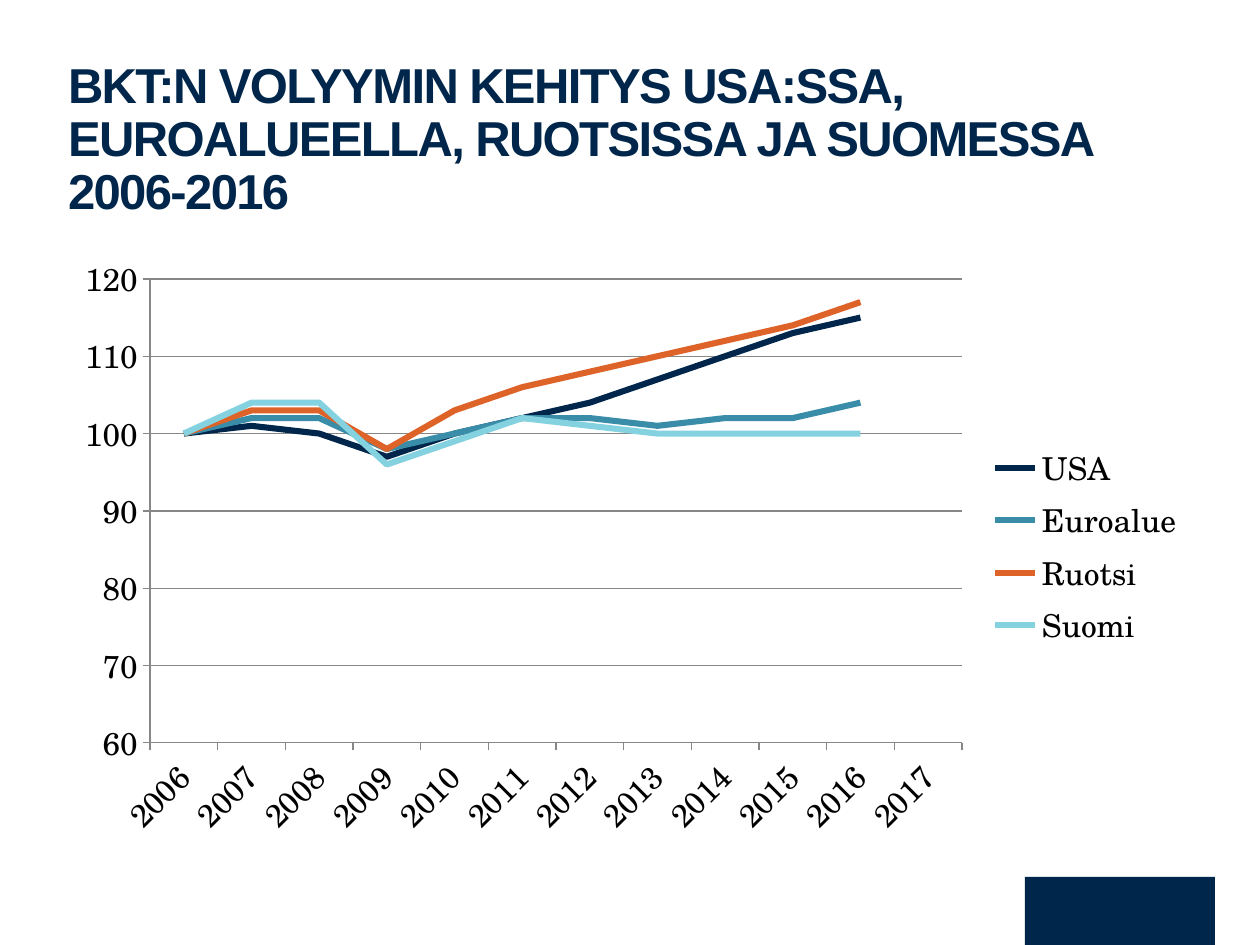
from dataclasses import dataclass

from lxml import etree
from pptx import Presentation
from pptx.chart.data import CategoryChartData
from pptx.dml.color import RGBColor
from pptx.enum.chart import XL_CHART_TYPE, XL_LEGEND_POSITION, XL_TICK_MARK
from pptx.enum.shapes import MSO_SHAPE
from pptx.enum.text import MSO_ANCHOR, PP_ALIGN
from pptx.oxml.ns import qn
from pptx.util import Pt

LINE_CHART = XL_CHART_TYPE.LINE
LEGEND_RIGHT = XL_LEGEND_POSITION.RIGHT
TICK_OUTSIDE = XL_TICK_MARK.OUTSIDE
RECTANGLE = MSO_SHAPE.RECTANGLE
MIDDLE = MSO_ANCHOR.MIDDLE
LEFT = PP_ALIGN.LEFT
TITLE_ONLY = 5


@dataclass
class Theme:
    navy: RGBColor = RGBColor(0x00, 0x27, 0x4B)
    teal: RGBColor = RGBColor(0x3A, 0x8D, 0xA9)
    orange: RGBColor = RGBColor(0xDE, 0x63, 0x28)
    aqua: RGBColor = RGBColor(0x84, 0xD2, 0xDF)
    black: RGBColor = RGBColor(0, 0, 0)
    grid: RGBColor = RGBColor(0x87, 0x87, 0x87)
    title_font: str = "Arial"
    chart_font: str = "TeX Gyre Schola"
    title_size: int = 28
    chart_size: int = 18


def px(length):
    return round(length * 914400 / 126)


theme = Theme()
presentation = Presentation()
presentation.slide_width = px(1260)
presentation.slide_height = px(945)
slide = presentation.slides.add_slide(presentation.slide_layouts[TITLE_ONLY])

# Plain block in the brand corner
brand_block = slide.shapes.add_shape(RECTANGLE, px(1025), px(877), px(190), px(68))
brand_block.shadow.inherit = False
brand_block.fill.solid()
brand_block.fill.fore_color.rgb = theme.navy
brand_block.line.fill.background()

# Title
title = slide.shapes.title
title.left, title.top, title.width, title.height = px(63), px(56), px(1134), px(169)
text_frame = title.text_frame
text_frame.text = "BKT:N VOLYYMIN KEHITYS USA:SSA, EUROALUEELLA, RUOTSISSA JA SUOMESSA 2006-2016"
text_frame.word_wrap = True
text_frame.vertical_anchor = MIDDLE
text_frame.margin_left = text_frame.margin_right = px(5)
text_frame.margin_top = text_frame.margin_bottom = px(5)
paragraph = text_frame.paragraphs[0]
paragraph.alignment = LEFT
paragraph.line_spacing = 0.9
title_run = paragraph.runs[0]
title_run.font.name = theme.title_font
title_run.font.size = Pt(theme.title_size)
title_run.font.bold = True
title_run.font.color.rgb = theme.navy
title_run._r.get_or_add_rPr().set("spc", "-90")

# GDP volume index, 2006 = 100; 2017 has no values yet
gdp_series = [
    ("USA", theme.navy, [100, 101, 100, 97, 100, 102, 104, 107, 110, 113, 115]),
    ("Euroalue", theme.teal, [100, 102, 102, 98, 100, 102, 102, 101, 102, 102, 104]),
    ("Ruotsi", theme.orange, [100, 103, 103, 98, 103, 106, 108, 110, 112, 114, 117]),
    ("Suomi", theme.aqua, [100, 104, 104, 96, 99, 102, 101, 100, 100, 100, 100]),
]
chart_data = CategoryChartData()
chart_data.categories = [str(year) for year in range(2006, 2018)]
for name, color, values in gdp_series:
    chart_data.add_series(name, values + [None])
chart = slide.shapes.add_chart(
    LINE_CHART, px(63), px(244), px(1134), px(605), chart_data
).chart
chart.has_title = False
chart.font.name = theme.chart_font
chart.font.size = Pt(theme.chart_size)
chart.font.color.rgb = theme.black

# Series lines
plot = chart.plots[0]
plot.vary_by_categories = False
for series, (name, color, values) in zip(plot.series, gdp_series):
    series.smooth = False
    series.format.line.color.rgb = color
    series.format.line.width = Pt(3.5)

# Axes and gridlines
value_axis, category_axis = chart.value_axis, chart.category_axis
value_axis.minimum_scale = 60
value_axis.maximum_scale = 120
value_axis.major_unit = 10
value_axis.has_major_gridlines = True
for axis in (value_axis, category_axis):
    axis.major_tick_mark = TICK_OUTSIDE
for part in (value_axis, category_axis, value_axis.major_gridlines):
    part.format.line.color.rgb = theme.grid
    part.format.line.width = Pt(0.7)

# Slanted year labels
category_axis.tick_labels.font.size = Pt(theme.chart_size)
label_body = category_axis._element.find(qn("c:txPr")).find(qn("a:bodyPr"))
label_body.set("rot", "-2700000")
label_body.set("vert", "horz")

# Legend
chart.has_legend = True
chart.legend.position = LEGEND_RIGHT
chart.legend.include_in_layout = False

# Plot area inside the chart frame, as fractions of it
plot_area = chart._chartSpace.chart.plotArea
for layout in plot_area.findall(qn("c:layout")):
    plot_area.remove(layout)
layout = etree.Element(qn("c:layout"))
plot_area.insert(0, layout)
manual_layout = etree.SubElement(layout, qn("c:manualLayout"))
for tag, value in [
    ("layoutTarget", "inner"), ("xMode", "edge"), ("yMode", "edge"),
    ("x", 87 / 1134), ("y", 35 / 605), ("w", 812 / 1134), ("h", 464 / 605),
]:
    etree.SubElement(manual_layout, qn(f"c:{tag}")).set("val", str(value))

presentation.save("out.pptx")
